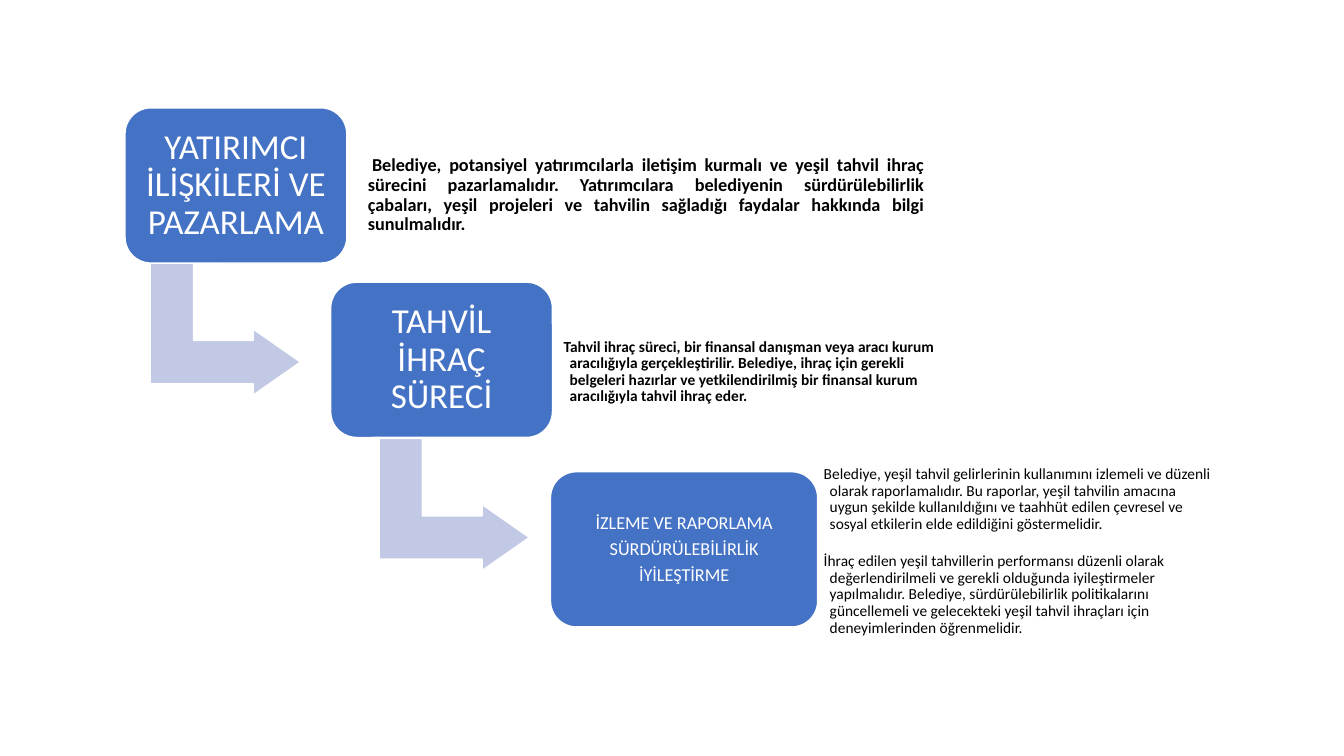
from dataclasses import dataclass

from pptx import Presentation
from pptx.dml.color import RGBColor
from pptx.enum import shapes, text
from pptx.util import Inches, Pt


@dataclass(frozen=True)
class Theme:
    font: str = "Calibri"
    box: RGBColor = RGBColor(0x44, 0x72, 0xC4)
    arrow: RGBColor = RGBColor(0xC1, 0xC9, 0xE4)
    light: RGBColor = RGBColor(0xFF, 0xFF, 0xFF)
    dark: RGBColor = RGBColor(0, 0, 0)
    large: int = 25
    medium: int = 13
    small: int = 11


@dataclass(frozen=True)
class Frame:
    left: float
    top: float
    width: float
    height: float

    def emu(self) -> list:
        return [Inches(v) for v in (self.left, self.top, self.width, self.height)]


@dataclass(frozen=True)
class Copy:
    """Paragraphs with their format; margins run left, top, right, bottom."""
    lines: tuple
    size: int
    color: RGBColor
    margins: tuple
    align: text.PP_ALIGN
    bold: bool = False
    space_after: float = 0
    hanging: float = 0
    indent: float = 0


@dataclass(frozen=True)
class Step:
    box: Frame
    heading: Copy
    detail_frame: Frame
    detail: Copy


THEME = Theme()
ALIGN = text.PP_ALIGN

STEPS = (
    Step(
        Frame(1.24, 1.07, 2.2, 1.54),
        Copy(("YATIRIMCI İLİŞKİLERİ VE PAZARLAMA",), THEME.large, THEME.light,
             (0.1,) * 4, ALIGN.CENTER),
        Frame(3.46, 1.2, 5.77, 1.24),
        Copy(("Belediye, potansiyel yatırımcılarla iletişim kurmalı ve yeşil tahvil "
              "ihraç sürecini pazarlamalıdır. Yatırımcılara belediyenin "
              "sürdürülebilirlik çabaları, yeşil projeleri ve tahvilin sağladığı "
              "faydalar hakkında bilgi sunulmalıdır.",),
             THEME.medium, THEME.dark, (0.07, 0.31, 0.07, 0.07), ALIGN.JUSTIFY,
             bold=True, hanging=0.12, indent=0.04),
    ),
    Step(
        Frame(3.28, 2.8, 2.2, 1.54),
        Copy(("TAHVİL İHRAÇ SÜRECİ",), THEME.large, THEME.light,
             (0.1,) * 4, ALIGN.CENTER),
        Frame(5.54, 2.95, 3.79, 1.24),
        Copy(("Tahvil ihraç süreci, bir finansal danışman veya aracı kurum "
              "aracılığıyla gerçekleştirilir. Belediye, ihraç için gerekli "
              "belgeleri hazırlar ve yetkilendirilmiş bir finansal kurum "
              "aracılığıyla tahvil ihraç eder.",),
             THEME.small, THEME.dark, (0.05, 0.29, 0.05, 0.05), ALIGN.LEFT,
             bold=True, hanging=0.06, indent=-0.06),
    ),
    Step(
        Frame(5.46, 4.68, 2.65, 1.54),
        Copy(("İZLEME VE RAPORLAMA", "SÜRDÜRÜLEBİLİRLİK", "İYİLEŞTİRME"),
             THEME.medium, THEME.light, (0.05,) * 4, ALIGN.CENTER, space_after=4.5),
        Frame(8.12, 4.57, 4, 1.9),
        Copy(("Belediye, yeşil tahvil gelirlerinin kullanımını izlemeli ve düzenli "
              "olarak raporlamalıdır. Bu raporlar, yeşil tahvilin amacına uygun "
              "şekilde kullanıldığını ve taahhüt edilen çevresel ve sosyal "
              "etkilerin elde edildiğini göstermelidir.",
              "İhraç edilen yeşil tahvillerin performansı düzenli olarak "
              "değerlendirilmeli ve gerekli olduğunda iyileştirmeler yapılmalıdır. "
              "Belediye, sürdürülebilirlik politikalarını güncellemeli ve "
              "gelecekteki yeşil tahvil ihraçları için deneyimlerinden "
              "öğrenmelidir."),
             THEME.small, THEME.dark, (0.05, 0.05, 0.05, 0.15), ALIGN.LEFT,
             space_after=14.5, hanging=0.06, indent=-0.06),
    ),
)

ARROWS = (Frame(1.58, 2.52, 1.31, 1.49), Frame(3.85, 4.26, 1.31, 1.49))


def apply(target, values: dict) -> None:
    for name, value in values.items():
        setattr(target, name, value)


def write(tf, copy: Copy) -> None:
    sides = ("margin_left", "margin_top", "margin_right", "margin_bottom")
    apply(tf, dict(zip(sides, map(Inches, copy.margins))))
    apply(tf, {"word_wrap": True, "vertical_anchor": text.MSO_ANCHOR.MIDDLE})
    for i, line in enumerate(copy.lines):
        p = tf.add_paragraph() if i else tf.paragraphs[0]
        if copy.hanging:
            pPr = p._p.get_or_add_pPr()
            pPr.set("marL", str(Inches(copy.hanging)))
            pPr.set("indent", str(Inches(copy.indent)))
        last = i == len(copy.lines) - 1
        apply(p, {"alignment": copy.align, "line_spacing": 0.9,
                  "space_after": Pt(0 if last else copy.space_after)})
        r = p.add_run()
        r.text = line
        apply(r.font, {"name": THEME.font, "size": Pt(copy.size), "bold": copy.bold})
        r.font.color.rgb = copy.color


def add_block(s, kind: shapes.MSO_SHAPE, frame: Frame, fill: RGBColor,
              adjustments: tuple):
    sp = s.shapes.add_shape(kind, *frame.emu())
    sp.shadow.inherit = False
    sp.fill.solid()
    sp.fill.fore_color.rgb = fill
    sp.line.color.rgb = THEME.light
    sp.line.width = Pt(1)
    for i, value in enumerate(adjustments):
        sp.adjustments[i] = value
    return sp


def add_step(s, step: Step) -> None:
    sp = add_block(s, shapes.MSO_SHAPE.ROUNDED_RECTANGLE, step.box, THEME.box, (0.167,))
    write(sp.text_frame, step.heading)
    detail = s.shapes.add_textbox(*step.detail_frame.emu())
    write(detail.text_frame, step.detail)


def main() -> None:
    prs = Presentation()
    apply(prs, {"slide_width": Inches(13.33), "slide_height": Inches(7.5)})
    s = prs.slides.add_slide(prs.slide_layouts[6])

    # Arrows lie behind the steps they join
    for frame in ARROWS:
        sp = add_block(s, shapes.MSO_SHAPE.BENT_UP_ARROW, frame, THEME.arrow,
                       (0.328, 0.25, 0.358))
        sp.rotation = 90

    # Steps with their explanations
    for step in STEPS:
        add_step(s, step)

    prs.save("out.pptx")


if __name__ == "__main__":
    main()
